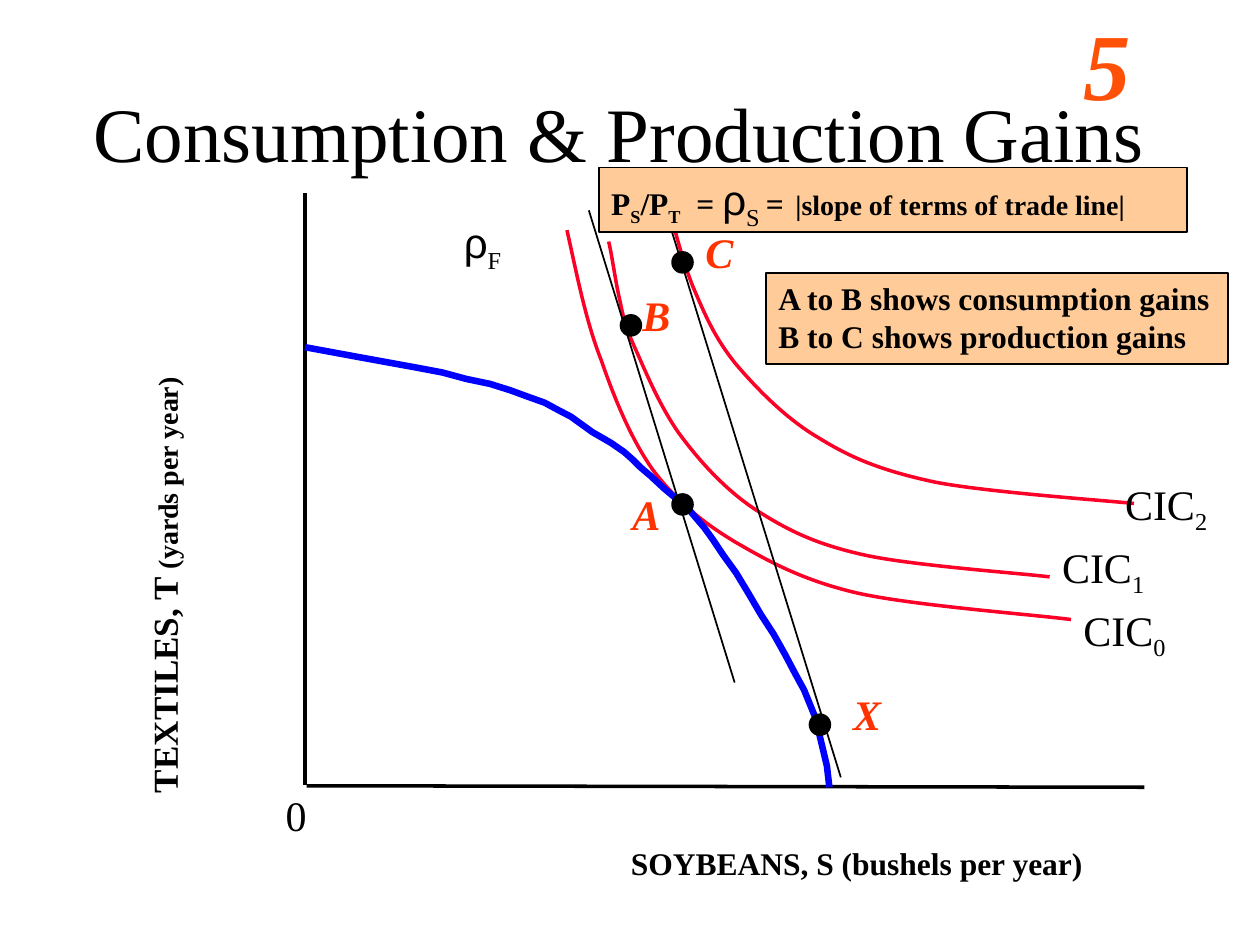
from lxml import etree
from pptx import Presentation
from pptx.dml.color import RGBColor
from pptx.enum.shapes import MSO_CONNECTOR, MSO_SHAPE
from pptx.enum.text import MSO_ANCHOR, PP_ALIGN
from pptx.oxml.ns import qn
from pptx.util import Cm, Pt

LINE = MSO_CONNECTOR.STRAIGHT
RECT, OVAL = MSO_SHAPE.RECTANGLE, MSO_SHAPE.OVAL
TOP, MID = MSO_ANCHOR.TOP, MSO_ANCHOR.MIDDLE
LEFT, MAIN = PP_ALIGN.LEFT, PP_ALIGN.CENTER
SERIF, SANS = "Times New Roman", "Arial"
INK = {"black": "000000", "red": "FC0128", "blue": "0000FF",
       "mark": "FF3300", "num": "FF5008", "note": "FFCC99"}
SUB = {"base": -25}

CURVES = [
    [(5.28, 1.04), (5.49, 1.98), (5.66, 2.87), (5.97, 3.66),
     (6.25, 4.47), (6.58, 5.26), (7.01, 5.87),
     (7.47, 6.48), (7.98, 6.91), (8.66, 7.32),
     (9.35, 7.72), (10.03, 8.1), (11.15, 8.36),
     (12.29, 8.61), (14.68, 8.79), (15.44, 8.89)],
    [(6.12, 1.27), (6.17, 1.45), (6.25, 2.01), (6.32, 2.34),
     (6.4, 2.67), (6.4, 2.84), (6.6, 3.3),
     (6.81, 3.76), (7.11, 4.52), (7.52, 5.11),
     (7.92, 5.66), (8.46, 6.27), (9.09, 6.68),
     (9.73, 7.09), (10.29, 7.37), (11.28, 7.59),
     (12.24, 7.8), (14.35, 7.95), (15.01, 8.03)],
    [(7.19, 0), (7.39, 0.79), (7.57, 1.55), (7.82, 2.18),
     (8.08, 2.79), (8.26, 3.2), (8.66, 3.71),
     (9.09, 4.22), (9.7, 4.85), (10.36, 5.23),
     (11.02, 5.64), (11.63, 5.89), (12.7, 6.12),
     (13.74, 6.32), (16, 6.48), (16.71, 6.55)],
]
FRONT = [
    (0, 3.4), (1.14, 3.61), (2.24, 3.81), (2.77, 3.91), (3.25, 4.04),
    (3.73, 4.14), (4.14, 4.27), (4.47, 4.39), (4.83, 4.52), (5.11, 4.67),
    (5.36, 4.8), (5.79, 5.11), (6.17, 5.33), (6.43, 5.51), (6.6, 5.66),
    (6.76, 5.82), (6.96, 5.99), (7.24, 6.25), (7.54, 6.5), (7.72, 6.65),
    (7.87, 6.83), (8.05, 7.04), (8.23, 7.29), (8.43, 7.59), (8.69, 7.95),
    (8.92, 8.33), (9.19, 8.79), (9.45, 9.19), (9.68, 9.6), (9.88, 9.98),
    (10.06, 10.31), (10.29, 10.87), (10.41, 11.38), (10.52, 11.84),
    (10.57, 12.27)]
LINES = [(8.66, 10.16, 5.72, 0.64, 1), (10.8, 12.07, 7.19, 0.41, 1),
         (0, 0.3, 0, 12.22, 2), (0.03, 12.24, 16.92, 12.27, 2)]
DOTS = [("A", (7.61, 6.57), (6.35, 6.12)), ("B", (6.57, 2.96), (6.55, 2.11)),
        ("C", (7.61, 1.69), (7.82, 0.84)), ("X", (10.38, 11.01), (10.8, 10.16))]
NAMES = [(15.44, 8.46), (15.01, 7.19), (16.28, 5.92)]


def tint(name):
    return RGBColor.from_string(INK[name])


def stroke(item, color, width):
    item.line.color.rgb = tint(color)
    item.line.width = Pt(width)


def write(frame, text, size=24, color="black", bold=False, slant=False,
          font=SERIF, align=LEFT, anchor=TOP, wrap=False):
    rows = [[(row, {})] for row in text.split("\n")] if isinstance(text, str) else [text]
    frame.word_wrap = wrap
    frame.vertical_anchor = anchor
    for i, row in enumerate(rows):
        para = frame.add_paragraph() if i else frame.paragraphs[0]
        para.alignment = align
        for words, style in row:
            run = para.add_run()
            run.text = words
            face = run.font
            face.name = style.get("font", font)
            face.size = Pt(style.get("size", size))
            face.bold = style.get("bold", bold)
            face.italic = slant
            face.color.rgb = tint(color)
            if "base" in style:
                run._r.get_or_add_rPr().set("baseline", str(style["base"] * 1000))


def label(slide, box, text, turn=0, **style):
    area = slide.shapes.add_textbox(*map(Cm, box))
    area.rotation = turn
    write(area.text_frame, text, **style)


def block(slide, kind, box, fill):
    item = slide.shapes.add_shape(kind, *map(Cm, box))
    item.shadow.inherit = False
    item.fill.solid()
    item.fill.fore_color.rgb = tint(fill)
    stroke(item, "black", 1)
    return item


def rule(slide, ends, width):
    item = slide.shapes.add_connector(LINE, *map(Cm, ends))
    stroke(item, "black", width)
    etree.SubElement(item._element.spPr, qn("a:effectLst"))


def trace(slide, spots, color, width):
    spots = [(Cm(x), Cm(y)) for x, y in spots]
    pen = slide.shapes.build_freeform(*spots[0])
    pen.add_line_segments(spots[1:], close=False)
    item = pen.convert_to_shape()
    item.shadow.inherit = False
    item.fill.background()
    stroke(item, color, width)
    return item


def bend(item):
    track = next(item._element.iter(qn("a:path")))
    steps = track.findall(qn("a:lnTo"))
    for i in range(0, len(steps), 3):
        curve = etree.SubElement(track, qn("a:cubicBezTo"))
        for step in steps[i:i + 3]:
            curve.append(step[0])
            track.remove(step)


def graph(slide, left, top):
    def move(spots):
        return [(left + x, top + y) for x, y in spots]

    def place(x, y, wide, high=1.27):
        return left + x, top + y, wide, high

    for spots in CURVES:
        bend(trace(slide, move(spots), "red", 2))
    for x1, y1, x2, y2, width in LINES:
        rule(slide, (left + x1, top + y1, left + x2, top + y2), width)
    trace(slide, move(FRONT), "blue", 3.75)
    for name, (x, y), spot in DOTS:
        block(slide, OVAL, place(x - 0.21, y - 0.21, 0.42, 0.42), "black")
        label(slide, place(*spot, 1.07), name, color="mark", bold=True, slant=True)
    for i, spot in enumerate(NAMES):
        label(slide, place(*spot, 2.21), [("CIC", {}), (str(i), SUB)])
    label(slide, place(2.95, 0.64, 1.3), [("ρ", {"font": SANS}), ("F", SUB)])
    label(slide, place(-0.64, 12.19, 0.94), "0")
    label(slide, place(6.32, 13.28, 9.63, 1.02), "SOYBEANS, S (bushels per year)",
          size=18, bold=True)
    label(slide, place(-7.32, 7.62, 8.94, 1.09),
          [("TEXTILES, T ", {}), ("(yards per year)", {"size": 16})],
          turn=270, size=20, bold=True)


def note(slide, box, text):
    item = block(slide, RECT, box, "note")
    write(item.text_frame, text, size=18, bold=True, wrap=True)


def head(slide, left, top, wide, high):
    label(slide, (left, top + 1.07, wide, high), "Consumption & Production Gains",
          size=44, align=MAIN, anchor=MID, wrap=True)
    label(slide, (left + 20.75, top, 3.61, 2.54), "5", size=54, color="num",
          bold=True, slant=True, wrap=True)


def main():
    deck = Presentation()
    deck.slide_width, deck.slide_height = Cm(25.4), Cm(19.05)
    slide = deck.slides.add_slide(deck.slide_layouts[6])
    plain = {"size": 24, "bold": False}
    head(slide, 0.84, 0, 23.29, 3.18)
    graph(slide, 6.15, 3.6)
    note(slide, (12.07, 3.38, 11.86, 1.3), [
        ("P", {}), ("S", SUB), ("/P", {}), ("T", SUB), ("  = ", {}),
        ("ρ", {**plain, "font": SANS}), ("S ", {**plain, **SUB}), ("=", {}),
        (" ", {**plain, "font": SANS}),
        ("|slope of terms of trade line|", {"size": 16})])
    note(slide, (15.44, 5.51, 9.32, 1.83),
         "A to B shows consumption gains\nB to C shows production gains")
    deck.save("out.pptx")


if __name__ == "__main__":
    main()
